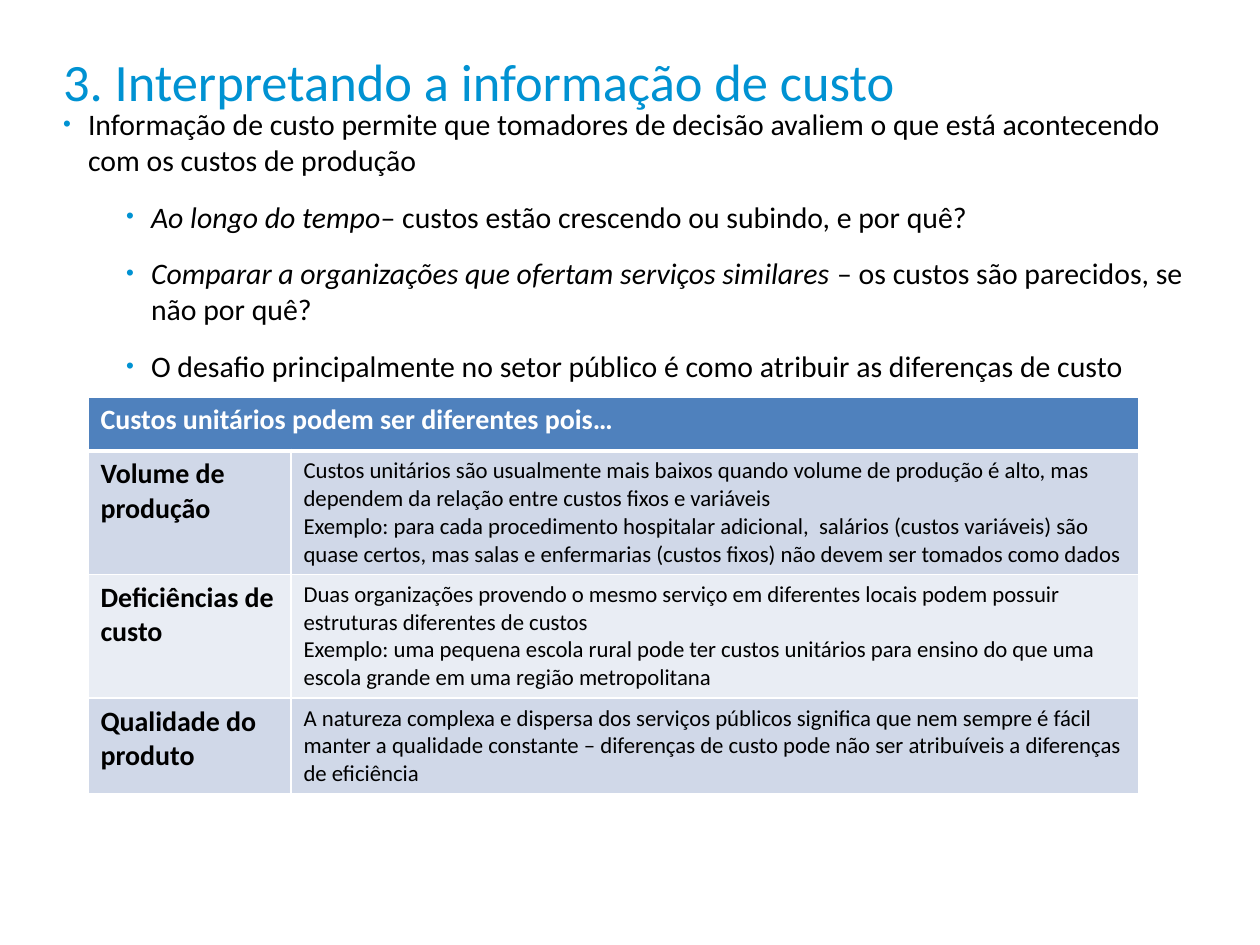
from lxml import etree
from pptx import Presentation
from pptx.dml.color import RGBColor
from pptx.enum.text import MSO_ANCHOR, MSO_AUTO_SIZE, PP_ALIGN
from pptx.oxml.ns import qn
from pptx.util import Pt

PX = 914400 / 126  # EMU in one px
LEFT, TOP, NO_AUTOFIT = PP_ALIGN.LEFT, MSO_ANCHOR.TOP, MSO_AUTO_SIZE.NONE

THEME = {
    "font": "Calibri",
    "accent": "0092D2", "text": "000000", "white": "FFFFFF",
    "header": "4F81BD", "bands": ("D0D8E8", "E9EDF4"),
    "title_size": 30, "list_size": 17, "label_size": 16, "detail_size": 13,
}


def px(*lengths):
    return [round(length * PX) for length in lengths]


def add_run(paragraph, text, size, color, bold=False, italic=False):
    run = paragraph.add_run()
    run.text = text
    font = run.font
    font.name, font.size = THEME["font"], Pt(size)
    font.bold, font.italic = bold, italic
    font.color.rgb = RGBColor.from_string(color)


prs = Presentation()
prs.slide_width, prs.slide_height = px(1260, 945)
slide = prs.slides.add_slide(prs.slide_layouts[1])

# Title and list placeholders
title, points = slide.shapes.title, slide.placeholders[1]
for holder, box in ((title, (63, 49, 1134, 63)), (points, (63, 106, 1144, 280))):
    holder.left, holder.top, holder.width, holder.height = px(*box)
    frame = holder.text_frame
    frame.margin_left = frame.margin_top = frame.margin_right = frame.margin_bottom = 0
    frame.vertical_anchor = TOP
    frame.word_wrap = True
    frame.auto_size = NO_AUTOFIT

heading = title.text_frame.paragraphs[0]
heading.alignment = LEFT
heading.space_after = Pt(6)
add_run(heading, "3. Interpretando a informação de custo", THEME["title_size"], THEME["accent"])

# Each point: level, italic lead, remaining text
POINTS = [
    (0, "", "Informação de custo permite que tomadores de decisão avaliem o que está "
            "acontecendo com os custos de produção"),
    (1, "Ao longo do tempo", "– custos estão crescendo ou subindo, e por quê?"),
    (1, "Comparar a organizações que ofertam serviços similares ",
     "– os custos são parecidos, se não por quê?"),
    (1, "", "O desafio principalmente no setor público é como atribuir as diferenças de custo"),
]
INDENTS, HANGING = (25, 88), 25
for number, (level, lead, rest) in enumerate(POINTS):
    frame = points.text_frame
    paragraph = frame.add_paragraph() if number else frame.paragraphs[0]
    paragraph.level = level
    paragraph.alignment = LEFT
    paragraph.space_before, paragraph.space_after = Pt(0), Pt(12)
    props = paragraph._p.get_or_add_pPr()
    margin, indent = px(INDENTS[level], -HANGING)
    props.set("marL", str(margin))
    props.set("indent", str(indent))
    bullet_color = etree.SubElement(props, qn("a:buClr"))
    etree.SubElement(bullet_color, qn("a:srgbClr"), val=THEME["accent"])
    etree.SubElement(props, qn("a:buSzPct"), val="75000")
    etree.SubElement(props, qn("a:buFont"), typeface="Arial")
    etree.SubElement(props, qn("a:buChar"), char="•")
    if lead:
        add_run(paragraph, lead, THEME["list_size"], THEME["text"], italic=True)
    add_run(paragraph, rest, THEME["list_size"], THEME["text"])

# Table of reasons: label, then the paragraphs of its explanation
HEADER = "Custos unitários podem ser diferentes pois…"
REASONS = [
    ("Volume de produção", [
        "Custos unitários são usualmente mais baixos quando volume de produção é alto, mas "
        "dependem da relação entre custos fixos e variáveis",
        "Exemplo: para cada procedimento hospitalar adicional,  salários (custos variáveis) são "
        "quase certos, mas salas e enfermarias (custos fixos) não devem ser tomados como dados"]),
    ("Deficiências de custo", [
        "Duas organizações provendo o mesmo serviço em diferentes locais podem possuir "
        "estruturas diferentes de custos",
        "Exemplo: uma pequena escola rural pode ter custos unitários para ensino do que uma "
        "escola grande em uma região metropolitana"]),
    ("Qualidade do produto", [
        "A natureza complexa e dispersa dos serviços públicos significa que nem sempre é fácil "
        "manter a qualidade constante – diferenças de custo pode não ser atribuíveis a "
        "diferenças de eficiência"]),
]
COLUMN_WIDTHS, ROW_HEIGHTS = (203, 848), (54, 122, 122, 94)
table = slide.shapes.add_table(
    len(ROW_HEIGHTS), len(COLUMN_WIDTHS),
    *px(88, 397, sum(COLUMN_WIDTHS), sum(ROW_HEIGHTS))).table
for column, width in zip(table.columns, px(*COLUMN_WIDTHS)):
    column.width = width
for row, height in zip(table.rows, px(*ROW_HEIGHTS)):
    row.height = height
table.cell(0, 0).merge(table.cell(0, 1))

add_run(table.cell(0, 0).text_frame.paragraphs[0], HEADER,
        THEME["label_size"], THEME["white"], bold=True)
for row_number, (label, details) in enumerate(REASONS, 1):
    add_run(table.cell(row_number, 0).text_frame.paragraphs[0], label,
            THEME["label_size"], THEME["text"], bold=True)
    frame = table.cell(row_number, 1).text_frame
    for number, detail in enumerate(details):
        paragraph = frame.add_paragraph() if number else frame.paragraphs[0]
        add_run(paragraph, detail, THEME["detail_size"], THEME["text"])

for row_number, row in enumerate(table.rows):
    fill_color = THEME["bands"][(row_number - 1) % 2] if row_number else THEME["header"]
    for cell in row.cells:
        cell.fill.solid()
        cell.fill.fore_color.rgb = RGBColor.from_string(fill_color)
        props = cell._tc.get_or_add_tcPr()
        for position, side in enumerate("LRTB"):
            under_header = (row_number, side) in ((0, "B"), (1, "T"))
            border = etree.Element(qn(f"a:ln{side}"), w=str(Pt(3 if under_header else 1)))
            border_fill = etree.SubElement(border, qn("a:solidFill"))
            etree.SubElement(border_fill, qn("a:srgbClr"), val=THEME["white"])
            props.insert(position, border)

prs.save("out.pptx")
